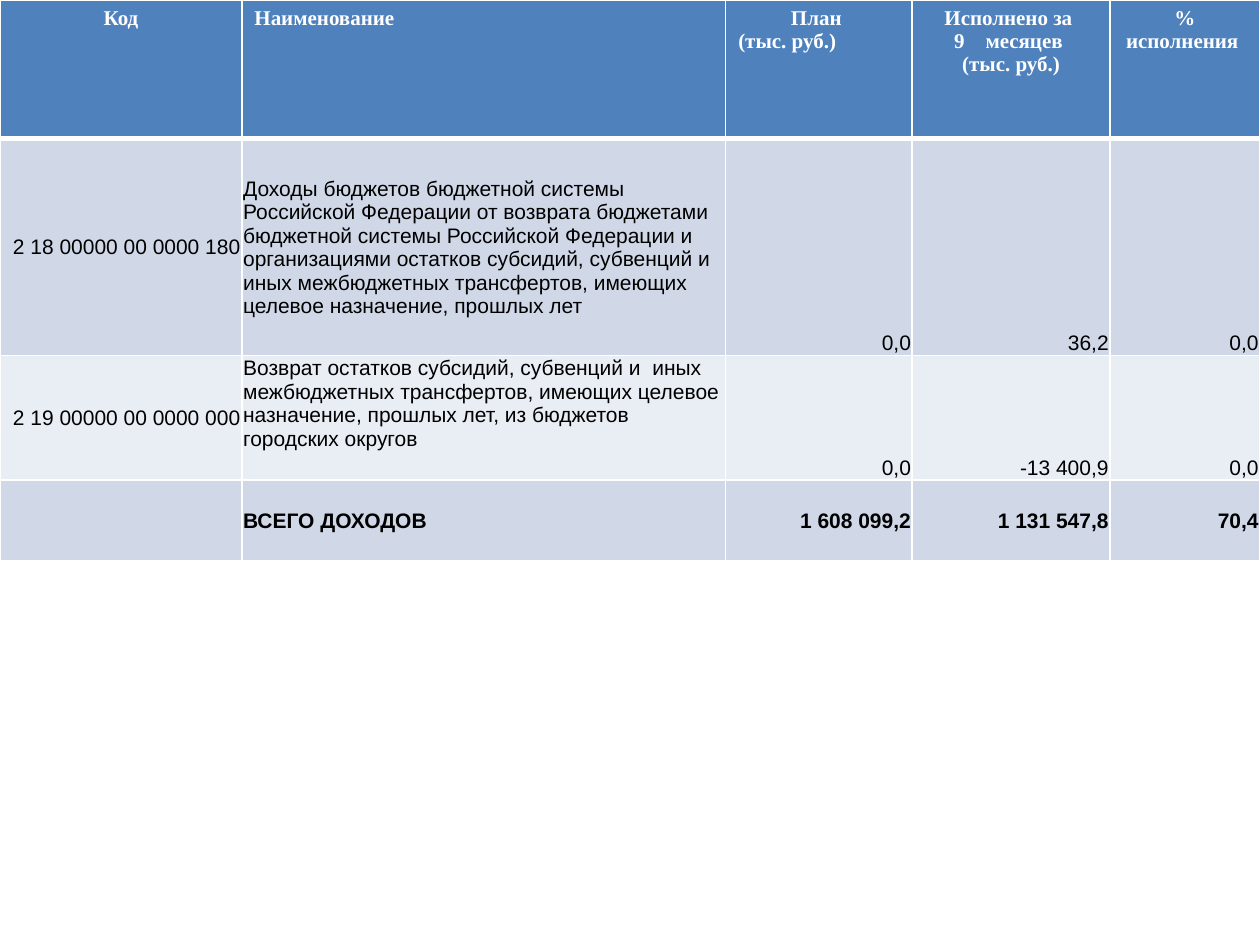
from lxml import etree
from pptx import Presentation
from pptx.dml.color import RGBColor
from pptx.enum import text
from pptx.oxml import ns
from pptx.util import Inches, Pt

LEFT, CENTER, RIGHT = text.PP_ALIGN.LEFT, text.PP_ALIGN.CENTER, text.PP_ALIGN.RIGHT
TOP, MIDDLE, BOTTOM = text.MSO_ANCHOR.TOP, text.MSO_ANCHOR.MIDDLE, text.MSO_ANCHOR.BOTTOM

COLUMN_WIDTHS = [1.92, 3.84, 1.48, 1.57, 1.19]
ROW_HEIGHTS = [1.1, 1.72, 0.99, 0.64]
BAND_FILLS = ["D0D8E8", "E9EDF4"]

# Each header is a list of (line, alignment)
HEADERS = [
    [("Код", CENTER)],
    [("Наименование", LEFT)],
    [("План ", CENTER), ("(тыс. руб.)", LEFT)],
    [("Исполнено за ", CENTER), ("месяцев ", CENTER), ("(тыс. руб.)", CENTER)],
    [("% исполнения ", CENTER)],
]
INCOME_ROWS = [
    ["2 18 00000 00 0000 180",
     "Доходы бюджетов бюджетной системы Российской Федерации от возврата "
     "бюджетами бюджетной системы Российской Федерации и организациями остатков "
     "субсидий, субвенций и иных межбюджетных трансфертов, имеющих целевое "
     "назначение, прошлых лет",
     "0,0", "36,2", "0,0"],
    ["2 19 00000 00 0000 000",
     "Возврат остатков субсидий, субвенций и  иных межбюджетных трансфертов, "
     "имеющих целевое назначение, прошлых лет, из бюджетов городских округов",
     "0,0", "-13 400,9", "0,0"],
    ["", "ВСЕГО ДОХОДОВ", "1 608 099,2", "1 131 547,8", "70,4"],
]
ALIGNMENTS = [RIGHT, LEFT, RIGHT, RIGHT, RIGHT]
ANCHORS = [
    [MIDDLE, MIDDLE, BOTTOM, BOTTOM, BOTTOM],
    [MIDDLE, TOP, BOTTOM, BOTTOM, BOTTOM],
    [MIDDLE] * 5,
]


def color(hex_value):
    return RGBColor.from_string(hex_value)


def write(paragraph, line, align=LEFT, font="Arial", size=12, ink="000000", bold=False):
    paragraph.alignment = align
    run = paragraph.add_run()
    run.text = line
    run.font.name = font
    run.font.size = Pt(size)
    run.font.bold = bold
    run.font.color.rgb = color(ink)


def hang(paragraph, start=None):
    """Give a hanging indent and, with start, an automatic number."""
    properties = paragraph._p.get_or_add_pPr()
    properties.set("marL", str(Inches(0.25)))
    properties.set("indent", str(-Inches(0.25)))
    if start:
        etree.SubElement(properties, ns.qn("a:buFont")).set("typeface", "+mj-lt")
        number = etree.SubElement(properties, ns.qn("a:buAutoNum"))
        number.set("type", "arabicPlain")
        number.set("startAt", str(start))


def style_cell(cell, fill, top=1, bottom=1):
    cell.fill.solid()
    cell.fill.fore_color.rgb = color(fill)
    properties = cell._tc.get_or_add_tcPr()
    sides = [("lnL", 1), ("lnR", 1), ("lnT", top), ("lnB", bottom)]
    for index, (side, width) in enumerate(sides):
        border = etree.Element(ns.qn(f"a:{side}"), w=str(Pt(width)))
        solid = etree.SubElement(border, ns.qn("a:solidFill"))
        etree.SubElement(solid, ns.qn("a:srgbClr")).set("val", "FFFFFF")
        properties.insert(index, border)


def fill_header(table):
    for column, lines in enumerate(HEADERS):
        cell = table.cell(0, column)
        style_cell(cell, "4F81BD", bottom=3)
        frame = cell.text_frame
        for index, (line, align) in enumerate(lines):
            paragraph = frame.add_paragraph() if index else frame.paragraphs[0]
            write(paragraph, line, align=align, font="Times New Roman",
                  ink="FFFFFF", bold=True)
    # The "9 months" line is numbered from nine
    months, unit = table.cell(0, 3).text_frame.paragraphs[1:]
    hang(months, start=9)
    hang(unit)


def fill_income(table):
    for row, values in enumerate(INCOME_ROWS):
        is_total = row == len(INCOME_ROWS) - 1
        for column, value in enumerate(values):
            cell = table.cell(row + 1, column)
            style_cell(cell, BAND_FILLS[row % 2], top=1 if row else 3)
            cell.vertical_anchor = ANCHORS[row][column]
            cell.margin_left = cell.margin_top = cell.margin_right = Inches(0.01)
            cell.margin_bottom = 0
            if value:
                write(cell.text_frame.paragraphs[0], value,
                      align=ALIGNMENTS[column], bold=is_total)


def add_income_table(slide, left, top, width, height):
    table = slide.shapes.add_table(len(ROW_HEIGHTS), len(COLUMN_WIDTHS), Inches(left),
                                   Inches(top), Inches(width), Inches(height)).table
    for column, column_width in zip(table.columns, COLUMN_WIDTHS):
        column.width = Inches(column_width)
    for row, row_height in zip(table.rows, ROW_HEIGHTS):
        row.height = Inches(row_height)
    fill_header(table)
    fill_income(table)


def main():
    deck = Presentation()
    deck.slide_width, deck.slide_height = Inches(10), Inches(7.5)
    slide = deck.slides.add_slide(deck.slide_layouts[6])
    add_income_table(slide, 0, 0, sum(COLUMN_WIDTHS), sum(ROW_HEIGHTS))
    deck.save("out.pptx")


if __name__ == "__main__":
    main()
